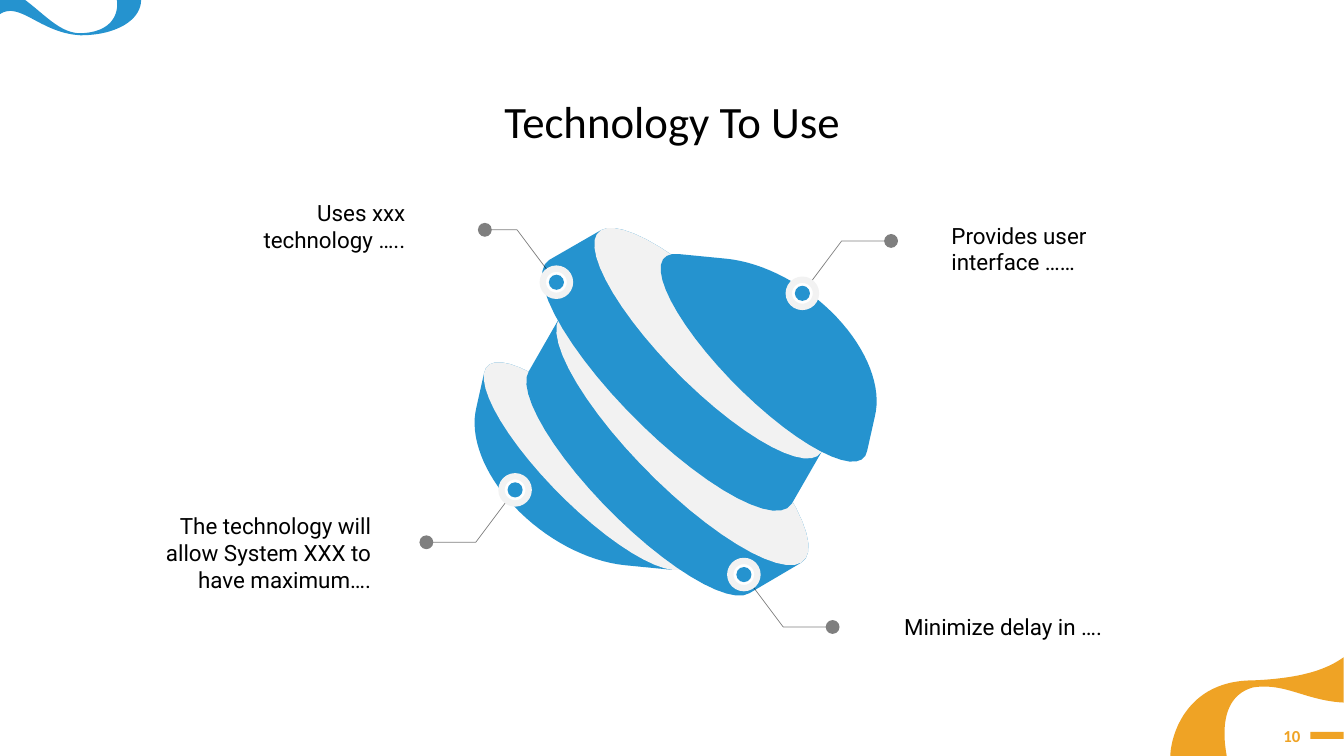
from dataclasses import dataclass
from math import cos, pi, sin

from lxml.etree import SubElement
from pptx import Presentation
from pptx.dml.color import RGBColor
from pptx.enum.shapes import MSO_SHAPE
from pptx.enum.text import MSO_ANCHOR, MSO_AUTO_SIZE, PP_ALIGN
from pptx.oxml.ns import qn
from pptx.util import Inches, Pt

CELL = Inches(0.1)
COLS, ROWS = 133.33, 75
STEPS = 48
BLUE, LIGHT, ORANGE, BLACK, WHITE = "2593CF", "F2F2F2", "EFA325", "000000", "FFFFFF"

Point = tuple[float, float]

LONG_AXIS: Point = (12.3, 9.4)
SHORT_AXIS: Point = (2.3, 8.35)
DOME_AXIS: Point = (5.85, -7.55)


@dataclass
class Disc:
    center: Point
    scale: float


@dataclass
class Slice:
    base: Disc
    face: Disc | None = None
    dome: int = 0


@dataclass
class Ribbon:
    color: str
    start: Point
    segments: list[tuple[float, ...]]


@dataclass
class Callout:
    text: str
    ring: Point
    side: int
    drop: int
    box: tuple[float, float, float, float]
    shelf: float = 4.9


LOW_FACE = Disc((58.25, 46.25), 0.82)
SLICES = [
    Slice(LOW_FACE, LOW_FACE, -1),
    Slice(Disc((63.6, 47.65), 0.91), Disc((67.7, 43.5), 1)),
    Slice(Disc((66.3, 38.1), 1), Disc((70.35, 34.05), 0.91)),
    Slice(Disc((75.8, 35.5), 0.82), dome=1),
]

RIBBONS = [
    Ribbon(ORANGE, (116.1, 75), [
        (116.2, 72.5, 118, 67.5, 124.3, 67.5), (128.9, 67.3, 131.5, 66.5, 133.3, 65.2),
        (133.3, 69.7), (129.5, 69.5, 127.5, 67.7, 124.3, 68.2),
        (121.1, 69.1, 121.3, 72.8, 121.7, 75)]),
    Ribbon(BLUE, (0, 0), [
        (2.5, 0), (4.5, 1.5, 6, 3.3, 8, 3.3), (11, 3.2, 11.8, 1.5, 11.6, 0),
        (14, 0), (14, 2, 11.5, 3.5, 8, 3.5), (4, 3.3, 2, 0.1, 0, 1.4)]),
]

CALLOUTS = [
    Callout("Provides user interface ……", (79.6, 29.1), 1, -1, (93.4, 21.5, 23.8, 6.4)),
    Callout("Uses xxx technology …..", (55.2, 28), -1, -1, (19.5, 19.3, 21.7, 6.4), 3.2),
    Callout("Minimize delay in ….", (73.8, 57), 1, 1, (88.7, 60.3, 26.8, 3.7)),
    Callout("The technology will allow System XXX to have maximum….",
            (51.1, 48.6), -1, 1, (14, 50.3, 23.8, 9.1)),
]


def rgb(color: str) -> RGBColor:
    return RGBColor.from_string(color)


def grid(*cells: float) -> list[int]:
    return [round(c * CELL) for c in cells]


def arc(disc: Disc, axis: Point = SHORT_AXIS, sweep: float = 2 * pi) -> list[Point]:
    angles = [sweep * i / STEPS for i in range(STEPS + 1)]
    return [(disc.center[0] + disc.scale * (LONG_AXIS[0] * cos(a) + axis[0] * sin(a)),
             disc.center[1] + disc.scale * (LONG_AXIS[1] * cos(a) + axis[1] * sin(a)))
            for a in angles]


def half_hull(points: list[Point]) -> list[Point]:
    chain: list[Point] = []
    for x, y in points:
        while len(chain) > 1:
            (ax, ay), (bx, by) = chain[-2:]
            if (bx - ax) * (y - ay) > (by - ay) * (x - ax):
                break
            chain.pop()
        chain.append((x, y))
    return chain[:-1]


def hull(points: list[Point]) -> list[Point]:
    ordered = sorted(set(points))
    return half_hull(ordered) + half_hull(ordered[::-1])


def trace(ribbon: Ribbon) -> list[Point]:
    points = [ribbon.start]
    for segment in ribbon.segments:
        if len(segment) == 2:
            points.append(segment)
            continue
        x0, y0 = points[-1]
        x1, y1, x2, y2, x3, y3 = segment
        for i in range(1, STEPS + 1):
            t = i / STEPS
            a, b, c, d = (1 - t) ** 3, 3 * t * (1 - t) ** 2, 3 * t * t * (1 - t), t ** 3
            points.append((a * x0 + b * x1 + c * x2 + d * x3,
                           a * y0 + b * y1 + c * y2 + d * y3))
    return points


def add_path(s, points: list[Point], close: bool):
    start, *rest = [tuple(grid(*point)) for point in points]
    builder = s.shapes.build_freeform(*start, scale=1.0)
    builder.add_line_segments(rest, close=close)
    return builder.convert_to_shape()


def paint(sp, color: str):
    sp.shadow.inherit = False
    sp.fill.solid()
    sp.fill.fore_color.rgb = rgb(color)
    sp.line.fill.background()
    return sp


def add_slice(s, part: Slice) -> None:
    points = arc(part.base)
    if part.face:
        points += arc(part.face)
    if part.dome:
        points += arc(part.base, DOME_AXIS, part.dome * pi)
    paint(add_path(s, hull(points), True), BLUE)
    if part.face:
        paint(add_path(s, arc(part.face), True), LIGHT)


def add_leader(s, points: list[Point]) -> None:
    sp = add_path(s, points, False)
    sp.shadow.inherit = False
    sp.fill.background()
    sp.line.color.rgb = rgb(BLACK)
    sp.line.width = Pt(0.5)
    ln = sp.line._get_or_add_ln()
    SubElement(ln.find(".//" + qn("a:srgbClr")), qn("a:alpha"), val="50000")
    SubElement(ln, qn("a:tailEnd"), type="oval", w="lg", len="lg")


def add_dot(s, center: Point, size: float, color: str):
    x, y = center
    box = grid(x - size / 2, y - size / 2, size, size)
    return paint(s.shapes.add_shape(MSO_SHAPE.OVAL, *box), color)


def set_text(sp, text: str, font: str, size: float, color: str, align: PP_ALIGN,
             anchor: MSO_ANCHOR = MSO_ANCHOR.TOP, bold: bool = False, wrap: bool = True) -> None:
    tf = sp.text_frame
    tf.text = text
    tf.word_wrap = wrap
    tf.auto_size = MSO_AUTO_SIZE.NONE
    tf.vertical_anchor = anchor
    p = tf.paragraphs[0]
    p.alignment = align
    f = p.runs[0].font
    f.name, f.size, f.bold = font, Pt(size), bold
    f.color.rgb = rgb(color)


def add_callout(s, callout: Callout) -> None:
    x, y = callout.ring
    elbow = (x + 3.9 * callout.side, y + 5.2 * callout.drop)
    add_leader(s, [callout.ring, elbow, (elbow[0] + callout.shelf * callout.side, elbow[1])])
    ring = add_dot(s, callout.ring, 2.7, WHITE)
    ring.line.color.rgb = rgb(LIGHT)
    ring.line.width = Pt(4.5)
    add_dot(s, callout.ring, 1.5, BLUE)
    align = PP_ALIGN.LEFT if callout.side > 0 else PP_ALIGN.RIGHT
    set_text(s.shapes.add_textbox(*grid(*callout.box)), callout.text, "Roboto", 16, BLACK, align)


def main() -> None:
    prs = Presentation()
    prs.slide_width, prs.slide_height = grid(COLS, ROWS)
    s = prs.slides.add_slide(prs.slide_layouts[5])
    title = s.shapes.title
    title.left, title.top, title.width, title.height = grid(46.3, 8.8, 40.8, 6.4)
    set_text(title, "Technology To Use", "Calibri", 32, BLACK, PP_ALIGN.CENTER, wrap=False)
    for part in SLICES:
        add_slice(s, part)
    for callout in CALLOUTS:
        add_callout(s, callout)
    for ribbon in RIBBONS:
        paint(add_path(s, trace(ribbon), True), ribbon.color)
    number = s.shapes.add_textbox(*grid(122.7, 71, 7.3, 4))
    set_text(number, "10", "Calibri", 12, ORANGE, PP_ALIGN.RIGHT, MSO_ANCHOR.MIDDLE, True)
    paint(s.shapes.add_shape(MSO_SHAPE.RECTANGLE, *grid(130, 72.6, 3.3, 0.7)), ORANGE)
    prs.save("out.pptx")


if __name__ == "__main__":
    main()
